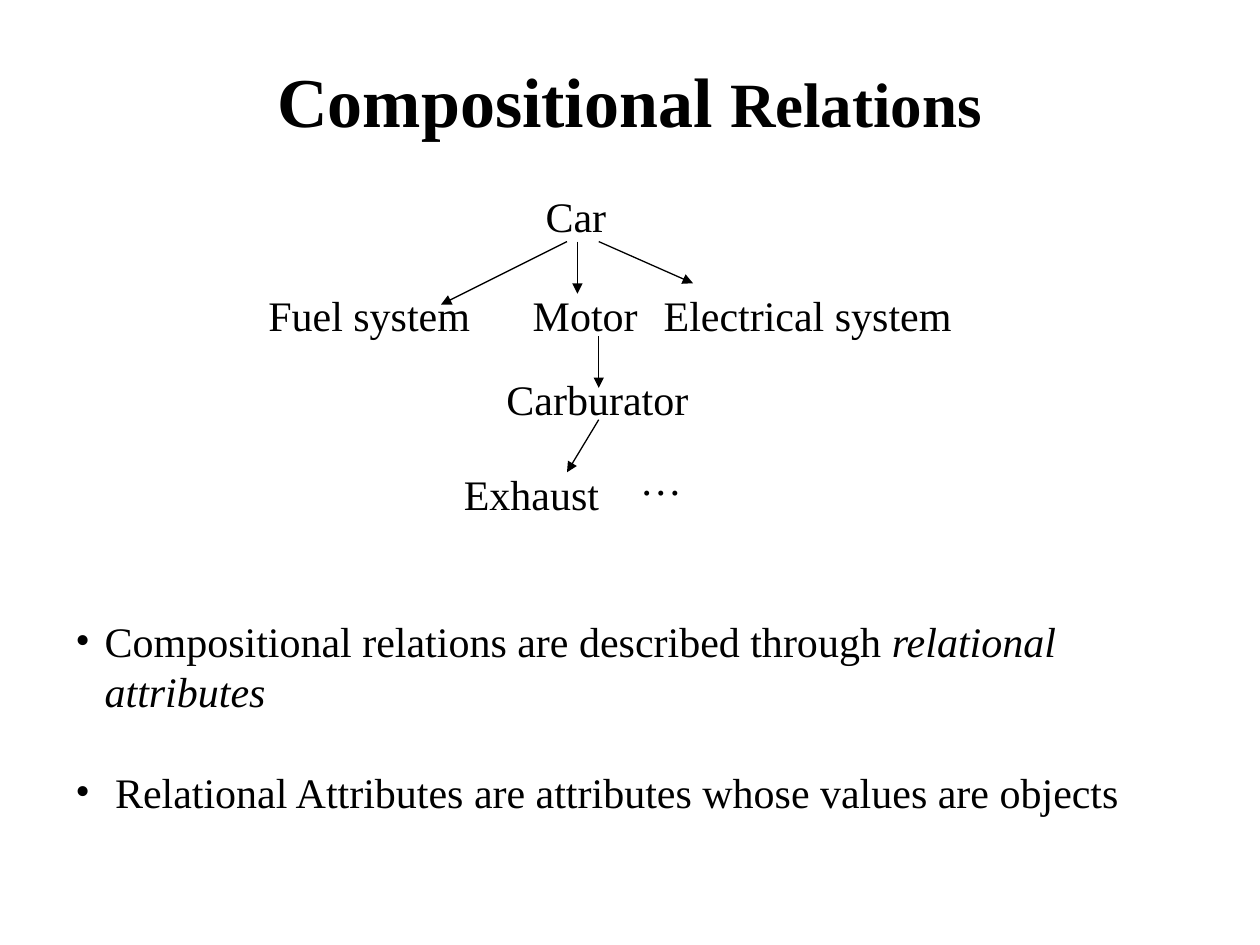
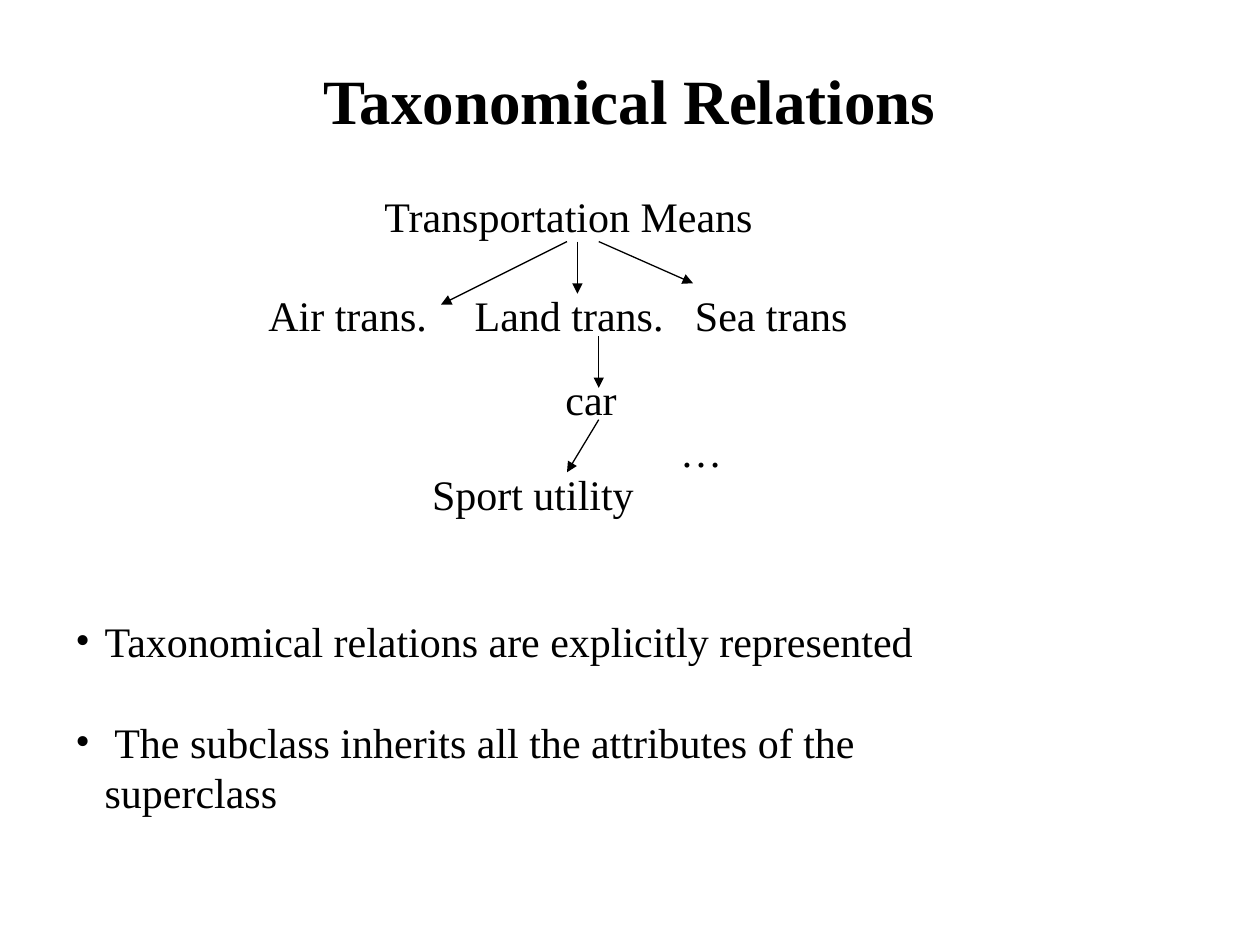
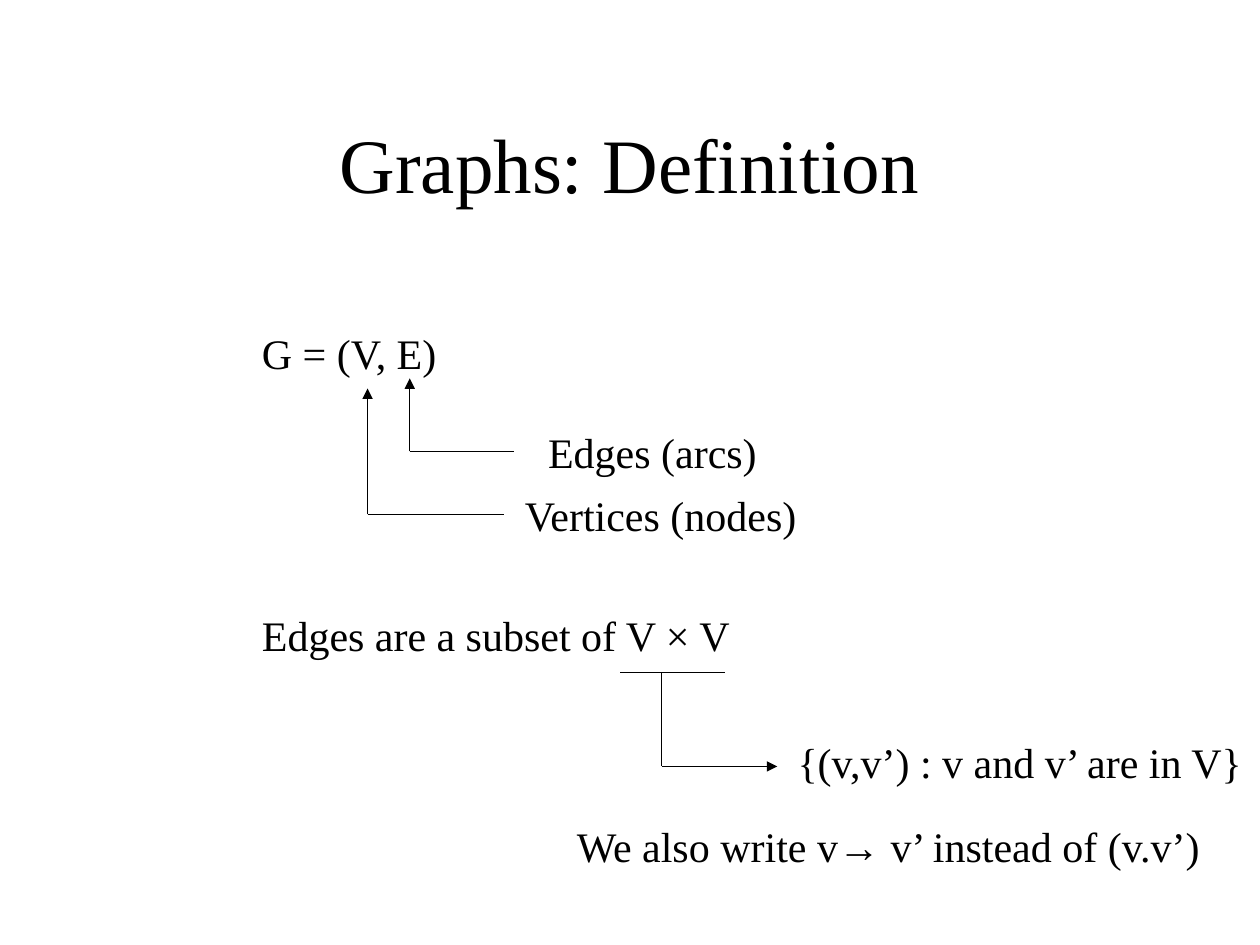
from lxml import etree
from pptx import Presentation
from pptx.dml.color import RGBColor
from pptx.enum.shapes import MSO_CONNECTOR
from pptx.enum.text import MSO_ANCHOR, MSO_AUTO_SIZE, PP_ALIGN
from pptx.oxml.ns import qn
from pptx.util import Cm, Pt

BLACK = RGBColor(0x00, 0x00, 0x00)
WHITE = RGBColor(0xFF, 0xFF, 0xFF)
FONT = "Times New Roman"
STRAIGHT = MSO_CONNECTOR.STRAIGHT
LEFT, CENTER = PP_ALIGN.LEFT, PP_ALIGN.CENTER
TOP, MIDDLE = MSO_ANCHOR.TOP, MSO_ANCHOR.MIDDLE
FIXED, FIT_TEXT = MSO_AUTO_SIZE.NONE, MSO_AUTO_SIZE.SHAPE_TO_FIT_TEXT

LABEL_HEIGHT = 1.27
BULLET_INDENT = 0.59
BULLET_GAP = Pt(28.8)

# Boxes are left, top, width, height in centimetres
TITLE_BOX = (1.9, 0.42, 21.59, 3.18)
LOW_TITLE_BOX = (1.9, 1.7, 21.59, 3.18)
TREE_ORIGIN = (5.16, 3.71)
DEFINITION_ORIGIN = (5.03, 6.48)

# Tops of the four tree levels, and the arrows between them
TREE_LEVELS = (0, 2.01, 3.7, 5.61)
TREE_ARROWS = (
    (6.27, 1.16, 3.73, 2.43),
    (6.48, 1.16, 6.48, 2.21),
    (6.91, 1.16, 8.81, 2.0),
    (6.91, 3.07, 6.91, 4.11),
    (6.91, 4.75, 6.27, 5.81),
)


def add_text(slide, box, paragraphs, size=24, bold=False, align=LEFT,
             anchor=TOP, wrap=False, bullets=False):
    """Each paragraph is a list of (text, font settings) runs, or a plain text."""
    shape = slide.shapes.add_textbox(*map(Cm, box))
    frame = shape.text_frame
    frame.word_wrap = wrap
    frame.auto_size = FIXED if wrap else FIT_TEXT
    frame.vertical_anchor = anchor
    for index, runs in enumerate(paragraphs):
        paragraph = frame.paragraphs[0] if index == 0 else frame.add_paragraph()
        paragraph.alignment = align
        if bullets:
            add_bullet(paragraph)
            paragraph.space_before = BULLET_GAP if index else Pt(0)
        for text, settings in [(runs, {})] if isinstance(runs, str) else runs:
            run = paragraph.add_run()
            run.text = text
            run.font.name = FONT
            run.font.size = Pt(settings.get("size", size))
            run.font.bold = bold
            run.font.italic = settings.get("italic", False)
            run.font.color.rgb = BLACK


def add_bullet(paragraph):
    properties = paragraph._p.get_or_add_pPr()
    properties.set("marL", str(Cm(BULLET_INDENT)))
    properties.set("indent", str(-Cm(BULLET_INDENT)))
    etree.SubElement(properties, qn("a:buFont")).set("typeface", FONT)
    etree.SubElement(properties, qn("a:buChar")).set("char", "•")


def add_label(slide, origin, left, top, width, text):
    add_text(slide, (origin[0] + left, origin[1] + top, width, LABEL_HEIGHT), [text])


def add_line(slide, origin, start_x, start_y, end_x, end_y, arrow=False):
    x, y = origin
    connector = slide.shapes.add_connector(
        STRAIGHT, Cm(x + start_x), Cm(y + start_y), Cm(x + end_x), Cm(y + end_y))
    connector.line.color.rgb = BLACK
    connector.line.width = Pt(0.75)
    if arrow:
        outline = connector.line._get_or_add_ln()
        etree.SubElement(outline, qn("a:tailEnd")).set("type", "triangle")
    etree.SubElement(connector._element.spPr, qn("a:effectLst"))


def add_slide(presentation, title, box=TITLE_BOX, size=36, bold=True):
    slide = presentation.slides.add_slide(presentation.slide_layouts[6])
    slide.background.fill.solid()
    slide.background.fill.fore_color.rgb = WHITE
    add_text(slide, box, [title], size=size, bold=bold, align=CENTER,
             anchor=MIDDLE, wrap=True)
    return slide


def add_tree(slide, origin, nodes, ellipsis_at):
    """Nodes are (level, left, width, text)."""
    for level, left, width, text in nodes:
        add_label(slide, origin, left, TREE_LEVELS[level], width, text)
    for arrow in TREE_ARROWS:
        add_line(slide, origin, *arrow, arrow=True)
    add_label(slide, origin, *ellipsis_at, 1.35, "…")


def add_relation_slide(presentation, title, nodes, ellipsis_at, points, points_width):
    slide = add_slide(presentation, title)
    add_tree(slide, TREE_ORIGIN, nodes, ellipsis_at)
    add_text(slide, (1.27, 12.28, points_width, 3.3), points, wrap=True, bullets=True)


def add_callout(slide, origin, corner, rise, reach, label_gap, width, text):
    """An elbow that points up at a symbol and leads right to its meaning."""
    x, y = corner
    add_line(slide, origin, x, y, x, y - rise, arrow=True)
    add_line(slide, origin, x, y, x + reach, y)
    add_label(slide, origin, x + label_gap, y - LABEL_HEIGHT / 2, width, text)


def add_product_note(slide, origin):
    """Underlines the product and leads to its definition."""
    add_line(slide, origin, 7.47, 7.07, 9.58, 7.07)
    add_line(slide, origin, 8.31, 7.07, 8.31, 8.97)
    add_line(slide, origin, 8.31, 8.97, 10.64, 8.97, arrow=True)
    add_label(slide, origin, 10.8, 8.25, 9.6, "{(v,v’) : v and v’ are in V}")


def add_definition_slide(presentation, origin):
    slide = add_slide(presentation, "Graphs: Definition", LOW_TITLE_BOX,
                      size=44, bold=False)
    add_label(slide, origin, 0, 0, 4.14, "G = (V, E)")
    add_callout(slide, origin, (2.38, 3.89), 2.54, 2.74, 2.92, 6.07, "Vertices (nodes)")
    add_callout(slide, origin, (3.23, 2.62), 1.47, 2.11, 2.54, 4.72, "Edges (arcs)")
    add_label(slide, origin, 0, 5.69, 9.98, "Edges are a subset of V × V")
    add_product_note(slide, origin)
    add_label(slide, origin, 6.35, 9.93, 13.23, "We also write v→ v’ instead of (v.v’)")


def main():
    presentation = Presentation()
    presentation.slide_width = Cm(25.4)
    presentation.slide_height = Cm(19.05)

    add_relation_slide(
        presentation,
        [("Compositional ", {"size": 40}), ("Relations", {})],
        [
            (0, 5.59, 1.73, "Car"),
            (1, 0, 4.57, "Fuel system"),
            (1, 5.33, 2.62, "Motor"),
            (1, 7.97, 6.35, "Electrical system"),
            (2, 4.8, 4.22, "Carburator"),
            (3, 3.94, 3.23, "Exhaust"),
        ],
        (7.49, 5.31),
        [
            [("Compositional relations are described through ", {}),
             ("relational attributes", {"italic": True})],
            " Relational Attributes are attributes whose values are objects",
        ],
        23.44,
    )
    add_relation_slide(
        presentation,
        "Taxonomical Relations",
        [
            (0, 2.34, 7.95, "Transportation Means"),
            (1, 0, 3.71, "Air trans."),
            (1, 4.16, 4.32, "Land trans."),
            (1, 8.6, 3.58, "Sea trans"),
            (2, 5.99, 1.55, "car"),
            (3, 3.3, 4.57, "Sport utility"),
        ],
        (8.3, 4.75),
        [
            "Taxonomical relations are explicitly represented",
            " The subclass inherits all the attributes of the superclass",
        ],
        19.61,
    )
    add_definition_slide(presentation, DEFINITION_ORIGIN)
    presentation.save("out.pptx")


if __name__ == "__main__":
    main()
